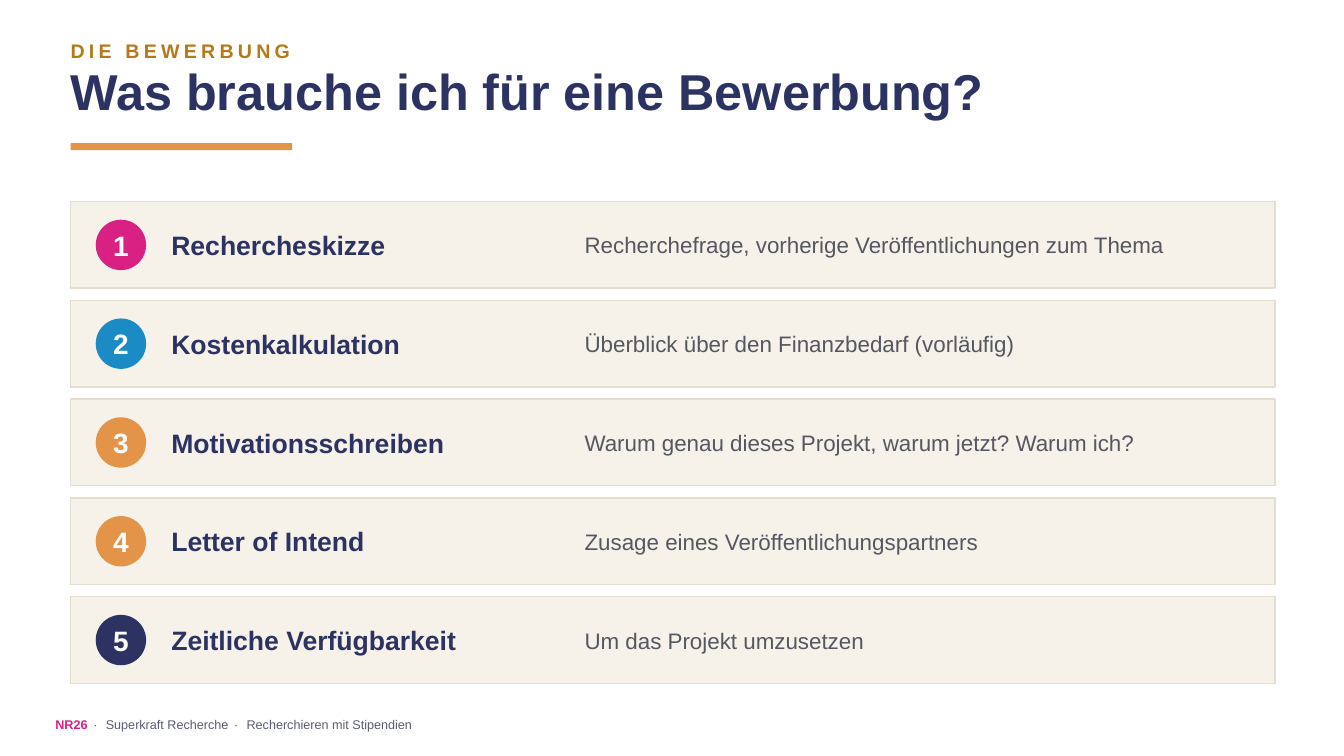
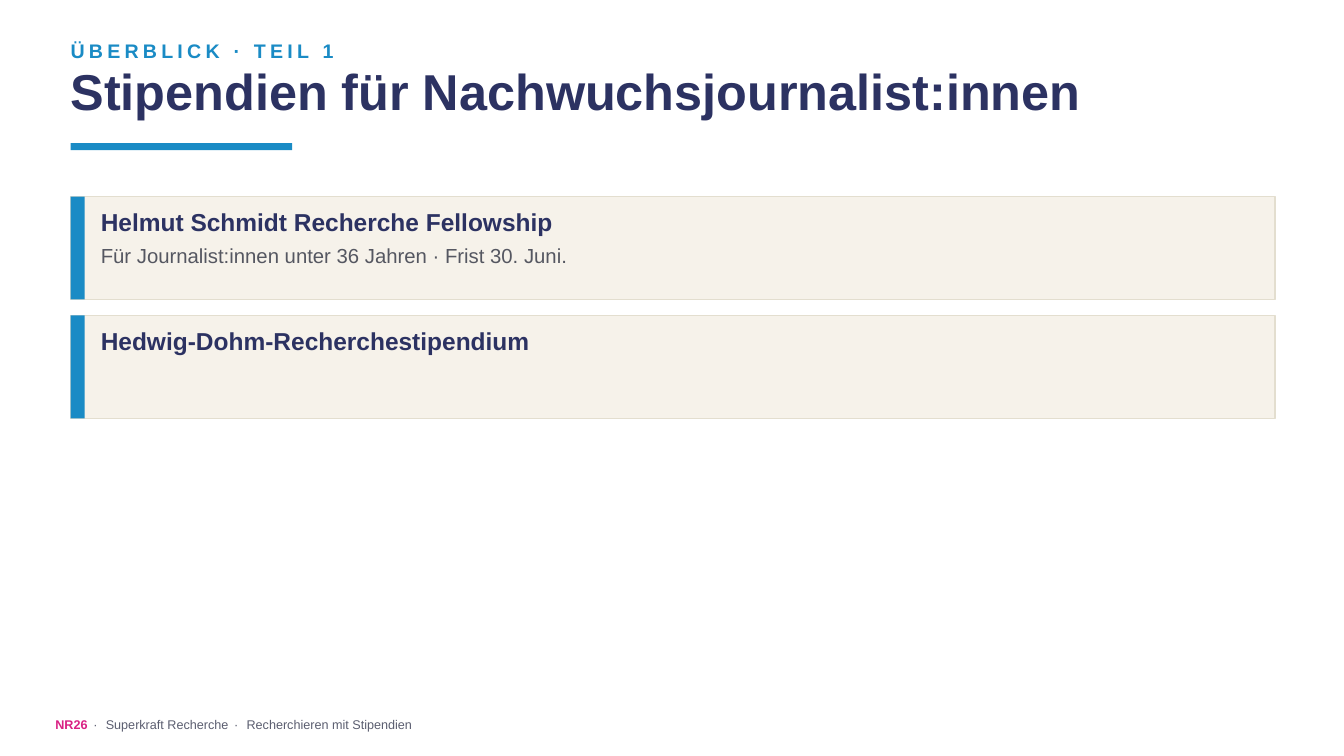
from pptx import Presentation
from pptx.dml.color import RGBColor
from pptx.enum.shapes import MSO_SHAPE
from pptx.enum.text import MSO_ANCHOR, PP_ALIGN
from pptx.util import Pt

NAVY = RGBColor(0x2C, 0x32, 0x62)
PINK = RGBColor(0xD9, 0x21, 0x84)
BLUE = RGBColor(0x1A, 0x8B, 0xC5)
ORANGE = RGBColor(0xE3, 0x94, 0x49)
OCHRE = RGBColor(0xB5, 0x79, 0x1A)
CREAM = RGBColor(0xF6, 0xF2, 0xEA)
SAND = RGBColor(0xE3, 0xDE, 0xCF)
GREY = RGBColor(0x55, 0x57, 0x61)
SLATE = RGBColor(0x5B, 0x5E, 0x70)
WHITE = RGBColor(0xFF, 0xFF, 0xFF)

FONT = "Arial"
LEFT = 50.4
CARD_WIDTH = 860.4


def add_block(page, kind, left, top, width, height, fill, outline=None):
    block = page.shapes.add_shape(kind, Pt(left), Pt(top), Pt(width), Pt(height))
    block.shadow.inherit = False
    block.fill.solid()
    block.fill.fore_color.rgb = fill
    if outline is None:
        block.line.fill.background()
    else:
        block.line.color.rgb = outline
        block.line.width = Pt(1)
    return block


def add_text(page, place, size, spans, anchor=MSO_ANCHOR.MIDDLE, align=PP_ALIGN.LEFT):
    box = page.shapes.add_textbox(*[Pt(length) for length in place])
    frame = box.text_frame
    frame.word_wrap = True
    frame.vertical_anchor = anchor
    frame.margin_left = frame.margin_right = frame.margin_top = frame.margin_bottom = 0
    para = frame.paragraphs[0]
    para.alignment = align
    for text, color, bold, spacing in spans:
        span = para.add_run()
        span.text = text
        span.font.name = FONT
        span.font.size = Pt(size)
        span.font.bold = bold
        span.font.color.rgb = color
        if spacing:
            span.font._element.set("spc", str(round(spacing * 100)))


deck = Presentation()
deck.slide_width = Pt(960)
deck.slide_height = Pt(540)

headings = [
    ("DIE BEWERBUNG", OCHRE, ORANGE, "Was brauche ich für eine Bewerbung?"),
    ("ÜBERBLICK · TEIL 1", BLUE, BLUE, "Stipendien für Nachwuchsjournalist:innen"),
]
separator = (" · ", SLATE, False, 1.67)
footer = [
    ("NR26", PINK, True, 0),
    separator,
    ("Superkraft Recherche", SLATE, False, 0),
    separator,
    ("Recherchieren mit Stipendien", SLATE, False, 0),
]
pages = []
for kicker, kicker_color, rule_color, title in headings:
    page = deck.slides.add_slide(deck.slide_layouts[6])
    page.background.fill.solid()
    page.background.fill.fore_color.rgb = WHITE
    add_block(page, MSO_SHAPE.RECTANGLE, LEFT, 102.24, 158.4, 5.04, rule_color)
    add_text(page, (LEFT, 24.5, 828, 23), 14, [(kicker, kicker_color, True, 3)])
    add_text(page, (LEFT, 43.2, 842.4, 50.4), 36, [(title, NAVY, True, 0)], MSO_ANCHOR.TOP)
    add_text(page, (39.6, 506.9, 878.4, 21.6), 9, footer)
    pages.append(page)
application_page, grants_page = pages

requirements = [
    ("Rechercheskizze", "Recherchefrage, vorherige Veröffentlichungen zum Thema", PINK),
    ("Kostenkalkulation", "Überblick über den Finanzbedarf (vorläufig)", BLUE),
    ("Motivationsschreiben", "Warum genau dieses Projekt, warum jetzt? Warum ich?", ORANGE),
    ("Letter of Intend", "Zusage eines Veröffentlichungspartners", ORANGE),
    ("Zeitliche Verfügbarkeit", "Um das Projekt umzusetzen", NAVY),
]
for index, (name, detail, color) in enumerate(requirements):
    top = 144 + index * 70.56
    badge = (68.4, top + 12.96, 36, 36)
    add_block(application_page, MSO_SHAPE.RECTANGLE, LEFT, top, CARD_WIDTH, 61.92, CREAM, SAND)
    add_block(application_page, MSO_SHAPE.OVAL, *badge, color)
    add_text(application_page, badge, 20, [(str(index + 1), WHITE, True, 0)], align=PP_ALIGN.CENTER)
    add_text(application_page, (122.4, top + 5.76, 288, 50.4), 19, [(name, NAVY, True, 0)])
    add_text(application_page, (417.6, top + 5.76, 482.4, 50.4), 16, [(detail, GREY, False, 0)])

grants = [
    ("Helmut Schmidt Recherche Fellowship", "Für Journalist:innen unter 36 Jahren · Frist 30. Juni."),
    ("Hedwig-Dohm-Recherchestipendium", None),
]
for index, (name, detail) in enumerate(grants):
    top = 140.4 + index * 84.96
    add_block(grants_page, MSO_SHAPE.RECTANGLE, LEFT, top, CARD_WIDTH, 73.44, CREAM, SAND)
    add_block(grants_page, MSO_SHAPE.RECTANGLE, LEFT, top, 10.08, 73.44, BLUE)
    add_text(grants_page, (72, top + 7.2, 820.8, 28.8), 17.5, [(name, NAVY, True, 0)], MSO_ANCHOR.TOP)
    if detail:
        add_text(grants_page, (72, top + 33.12, 820.8, 36), 14.5, [(detail, GREY, False, 0)], MSO_ANCHOR.TOP)

deck.save("out.pptx")
